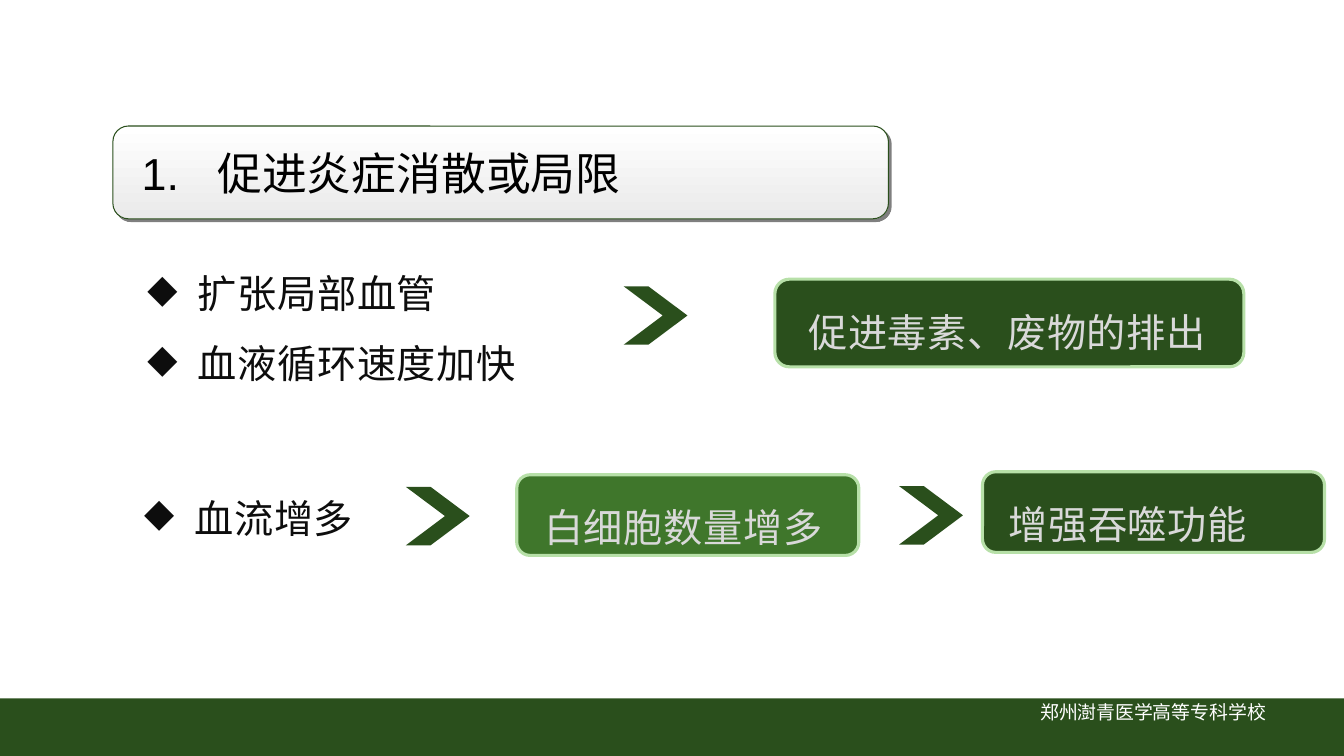
from lxml import etree
from pptx import Presentation
from pptx import util as u
from pptx.dml.color import RGBColor
from pptx.enum import shapes, text
from pptx.oxml import ns, parse_xml

DARK_GREEN = RGBColor(0x2A, 0x4F, 0x1C)
MID_GREEN = RGBColor(0x3F, 0x76, 0x2B)
PALE_GREEN = RGBColor(0xB7, 0xE0, 0xA8)
WHITE = RGBColor(0xFF, 0xFF, 0xFF)
LIGHT_GREY = RGBColor(0xEA, 0xEA, 0xEA)
TEXT_GREY = RGBColor(0xD9, 0xD9, 0xD9)
BLACK = RGBColor(0, 0, 0)
NEAR_BLACK = RGBColor(0x0D, 0x0D, 0x0D)
CJK = "Noto Sans CJK SC"
PRESET = shapes.MSO_SHAPE

presentation = Presentation()
presentation.slide_width = u.Inches(13.333)
presentation.slide_height = u.Inches(7.5)
slide = presentation.slides.add_slide(presentation.slide_layouts[6])
COLUMN = presentation.slide_width / 100
ROW = presentation.slide_height / 100


def add_box(preset, left, top, width, height, fill=None, line=None):
    """Place a shape, or a text box if preset is None, in percent of the slide."""
    area = [int(left * COLUMN), int(top * ROW), int(width * COLUMN), int(height * ROW)]
    if preset is None:
        shape = slide.shapes.add_textbox(*area)
    else:
        shape = slide.shapes.add_shape(preset, *area)
        shape.shadow.inherit = False
        shape.line.fill.background()
    if fill is not None:
        shape.fill.solid()
        shape.fill.fore_color.rgb = fill
    if line is not None:
        shape.line.color.rgb = line
        shape.line.width = u.Pt(2.25)
    shape.text_frame.word_wrap = True
    shape.text_frame.vertical_anchor = text.MSO_ANCHOR.TOP
    return shape


def add_words(paragraph, words, size, color, latin=CJK, spacing=0):
    run = paragraph.add_run()
    run.text = words
    run.font.size = u.Pt(size)
    run.font.color.rgb = color
    run.font.name = latin
    properties = run.font._element
    etree.SubElement(properties, ns.qn("a:ea"), typeface=CJK)
    if spacing:
        properties.set("spc", str(int(spacing * 100)))


# Footer
add_box(PRESET.RECTANGLE, 0, 92.4, 100, 7.6, DARK_GREEN)
school = add_box(None, 71.6, 92, 28.4, 6.1).text_frame.paragraphs[0]
school.alignment = text.PP_ALIGN.CENTER
add_words(school, "郑州澍青医学高等专科学校", 13.5, WHITE)

# Heading
heading = add_box(PRESET.ROUNDED_RECTANGLE, 8.4, 16.67, 57.7, 12.27, line=DARK_GREEN)
heading.line.width = u.Pt(0.75)
heading.fill.gradient()
heading.fill.gradient_angle = 270
for stop, color, position in zip(heading.fill.gradient_stops, (WHITE, LIGHT_GREY), (0, 1)):
    stop.color.rgb = color
    stop.position = position
effects = heading._element.spPr.find(ns.qn("a:effectLst"))
effects.append(parse_xml(
    f'<a:outerShdw {ns.nsdecls("a")} dist="35560" dir="2700000" algn="ctr" rotWithShape="0">'
    '<a:srgbClr val="000000"><a:alpha val="50000"/></a:srgbClr></a:outerShdw>'))
heading.text_frame.vertical_anchor = text.MSO_ANCHOR.MIDDLE
heading.text_frame.margin_left = u.Inches(0.24)
title = heading.text_frame.paragraphs[0]
title.alignment = text.PP_ALIGN.LEFT
title_properties = title._p.get_or_add_pPr()
title_properties.set("marL", str(u.Inches(0.75)))
title_properties.set("indent", str(-u.Inches(0.75)))
add_words(title, "1.\t促进炎症消散或局限", 32, BLACK, "Arial")

# Causes
causes = [
    (2.2, 35.33, 45, 1.05, ["扩张局部血管", "血液循环速度加快"]),
    (4.5, 60.4, 28, 0.71, ["血流增多"]),
]
for left, top, width, inset, items in causes:
    frame = add_box(None, left, top, width, 14.53).text_frame
    frame.vertical_anchor = text.MSO_ANCHOR.MIDDLE
    frame.margin_left = u.Inches(inset + 0.12)
    frame.margin_top = frame.margin_bottom = u.Inches(0.04)
    for index, item in enumerate(items):
        paragraph = frame.add_paragraph() if index else frame.paragraphs[0]
        properties = paragraph._p.get_or_add_pPr()
        properties.set("marL", str(u.Inches(0.5)))
        properties.set("indent", str(-u.Inches(0.5)))
        etree.SubElement(properties, ns.qn("a:buChar"), char="◆")
        paragraph.line_spacing = 1.25
        paragraph.space_after = u.Pt(8)
        add_words(paragraph, item, 28, NEAR_BLACK, spacing=0.5)

# Arrows
for left, top in [(46.4, 37.87), (30.2, 64.4), (66.9, 64.3)]:
    chevron = add_box(PRESET.CHEVRON, left, top, 4.75, 7.73, DARK_GREEN)
    chevron.adjustments[0] = 0.67

# Effects
panels = [
    (57.65, 36.93, 34.9, 11.6, 1.75, 31.9, DARK_GREEN, "促进毒素、废物的排出"),
    (38.45, 62.8, 25.45, 10.67, 1.3, 23.2, MID_GREEN, "白细胞数量增多"),
    (73.1, 62.4, 25.45, 10.67, 1.2, 23.2, DARK_GREEN, "增强吞噬功能"),
]
for left, top, width, height, inset, label_width, fill, words in panels:
    add_box(PRESET.ROUNDED_RECTANGLE, left, top, width, height, fill, PALE_GREEN)
    label = add_box(None, left + inset, top + 1.6, label_width, 8.13).text_frame.paragraphs[0]
    label.line_spacing = 1.25
    label.space_after = u.Pt(8)
    add_words(label, words, 28, TEXT_GREY, spacing=0.5)

presentation.save("out.pptx")
